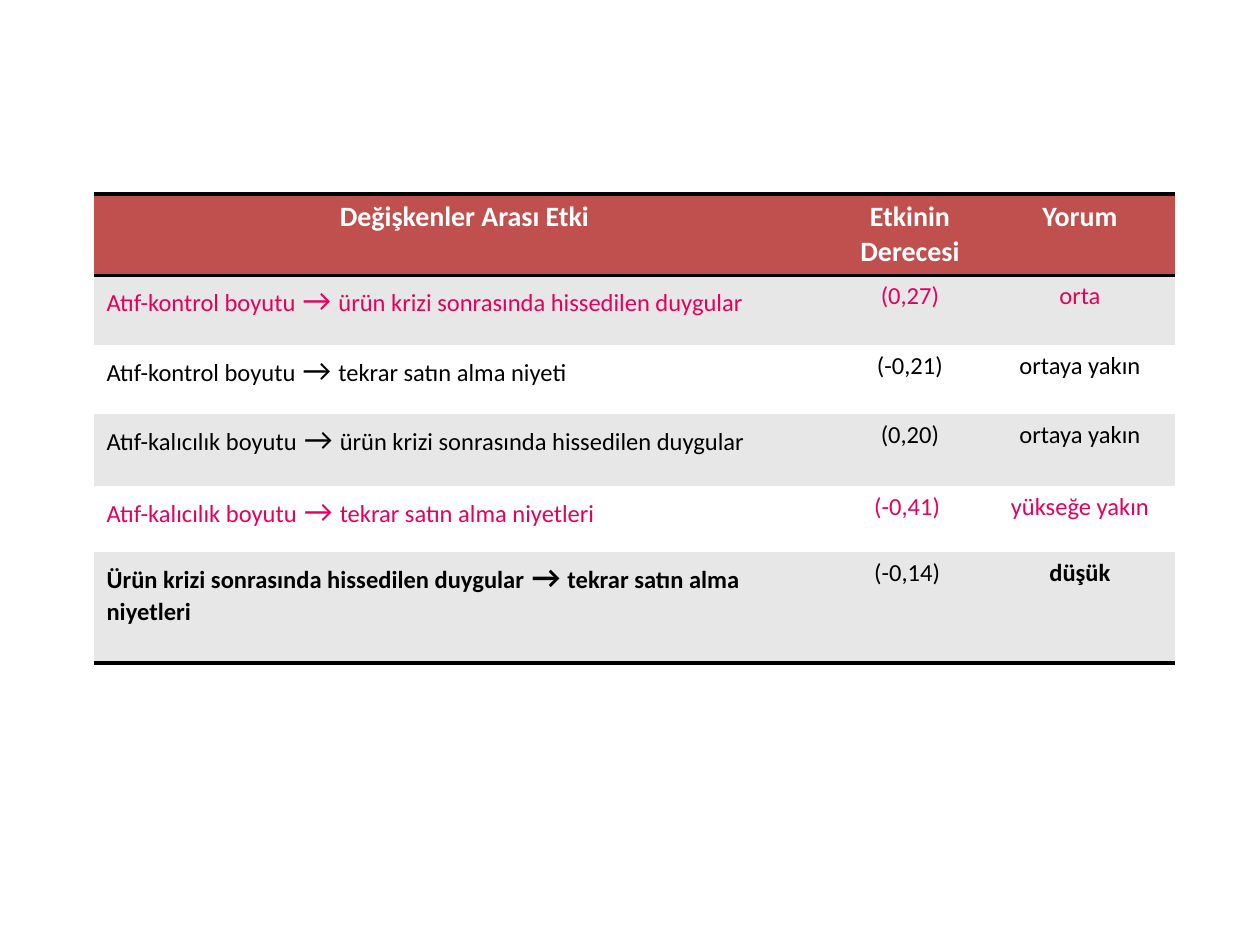
from lxml.etree import SubElement
from pptx import Presentation
from pptx.dml.color import RGBColor
from pptx.enum.text import PP_ALIGN
from pptx.oxml.ns import qn
from pptx.util import Emu, Pt

RED = RGBColor(0xC0, 0x50, 0x4D)
PINK = RGBColor(0xE6, 0x00, 0x5D)
GRAY = RGBColor(0xE7, 0xE7, 0xE7)
WHITE = RGBColor(0xFF, 0xFF, 0xFF)
BLACK = RGBColor(0, 0, 0)
LEFT, MID, JUST = PP_ALIGN.LEFT, PP_ALIGN.CENTER, PP_ALIGN.JUSTIFY

HEADS = ["Değişkenler Arası Etki", "Etkinin Derecesi", "Yorum"]
EFFECTS = [
    ("Atıf-kontrol boyutu", "ürün krizi sonrasında hissedilen duygular",
     "(0,27)", "orta", PINK, LEFT, False),
    ("Atıf-kontrol boyutu", "tekrar satın alma niyeti",
     "(-0,21)", "ortaya yakın", BLACK, LEFT, False),
    ("Atıf-kalıcılık boyutu", "ürün krizi sonrasında hissedilen duygular",
     "(0,20)", "ortaya yakın", BLACK, JUST, False),
    ("Atıf-kalıcılık boyutu", "tekrar satın alma niyetleri",
     "(-0,41) ", "yükseğe yakın", PINK, JUST, False),
    ("Ürün krizi sonrasında hissedilen duygular", "tekrar satın alma niyetleri",
     "(-0,14) ", "düşük", BLACK, LEFT, True),
]
WIDTHS = [741, 150, 190]
HEIGHTS = [81, 70, 69, 72, 66, 111]
X, Y = 94, 194


def px(n):
    return Emu(round(n * 914400 / 126))


def edge(cell, sides):
    props = cell._tc.get_or_add_tcPr()
    for side in "LRTB":
        line = SubElement(props, qn(f"a:ln{side}"), w=str(Pt(2)))
        if side in sides:
            fill = SubElement(line, qn("a:solidFill"))
            SubElement(fill, qn("a:srgbClr"), val=str(BLACK))
        else:
            SubElement(line, qn("a:noFill"))


def write(cell, parts, align, color, bold):
    para = cell.text_frame.paragraphs[0]
    para.alignment = align
    for text, size in parts:
        run = para.add_run()
        run.text = text
        font = run.font
        font.name, font.size, font.bold = "Calibri", Pt(size), bold
        font.color.rgb = color


deck = Presentation()
deck.slide_width, deck.slide_height = px(1260), px(945)
slide = deck.slides.add_slide(deck.slide_layouts[6])
table = slide.shapes.add_table(
    len(HEIGHTS), len(WIDTHS), px(X), px(Y), px(sum(WIDTHS)), px(sum(HEIGHTS))
).table
for col, width in zip(table.columns, WIDTHS):
    col.width = px(width)
for row, height in zip(table.rows, HEIGHTS):
    row.height = px(height)

last = len(EFFECTS)
sides = {0: "TB", 1: "T", last: "B"}
for r, row in enumerate(table.rows):
    for cell in row.cells:
        edge(cell, sides.get(r, ""))
        cell.fill.solid()
        cell.fill.fore_color.rgb = RED if r == 0 else GRAY if r % 2 else WHITE

for c, head in enumerate(HEADS):
    write(table.cell(0, c), [(head, 16)], MID, WHITE, True)
for r, (cause, result, degree, note, color, align, bold) in enumerate(EFFECTS, 1):
    write(table.cell(r, 0), [(cause, 14), (" → ", 18), (result, 14)], align, color, bold)
    write(table.cell(r, 1), [(degree, 14)], MID, color, False)
    write(table.cell(r, 2), [(note, 14)], MID, color, bold)

deck.save("out.pptx")
